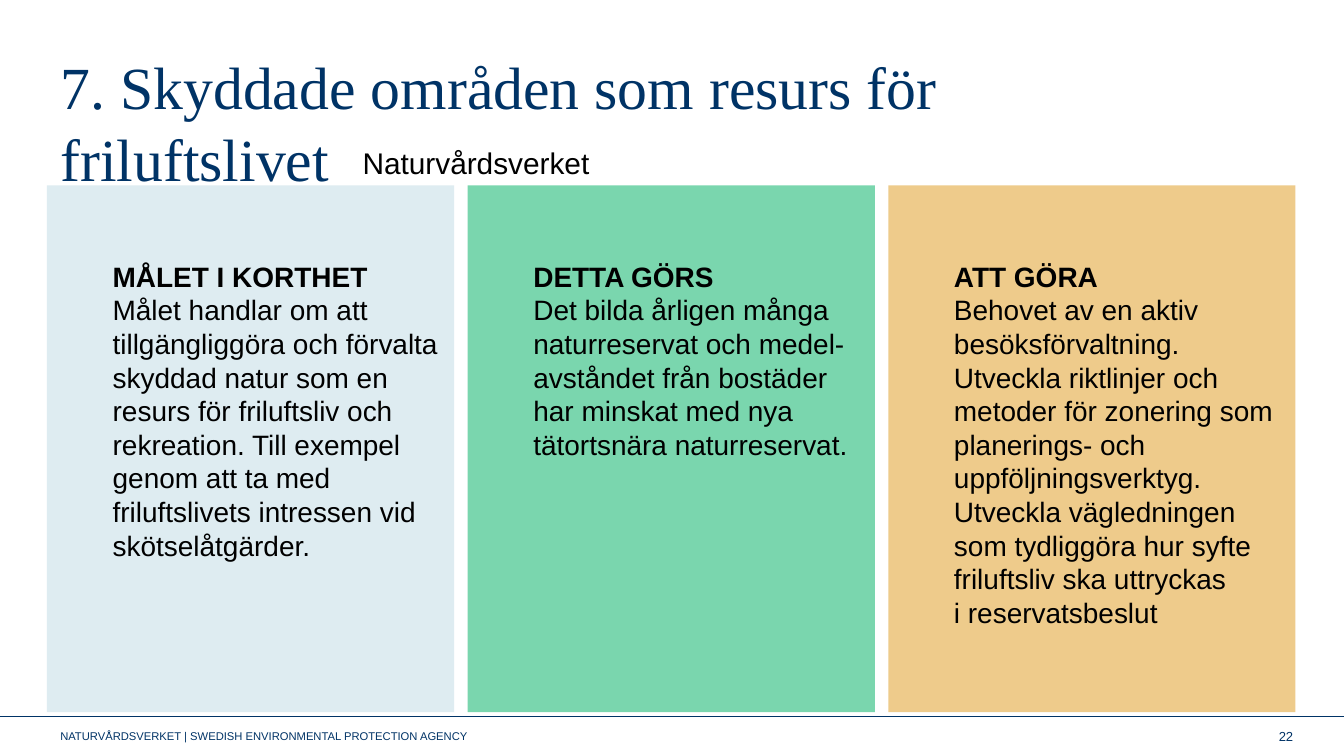
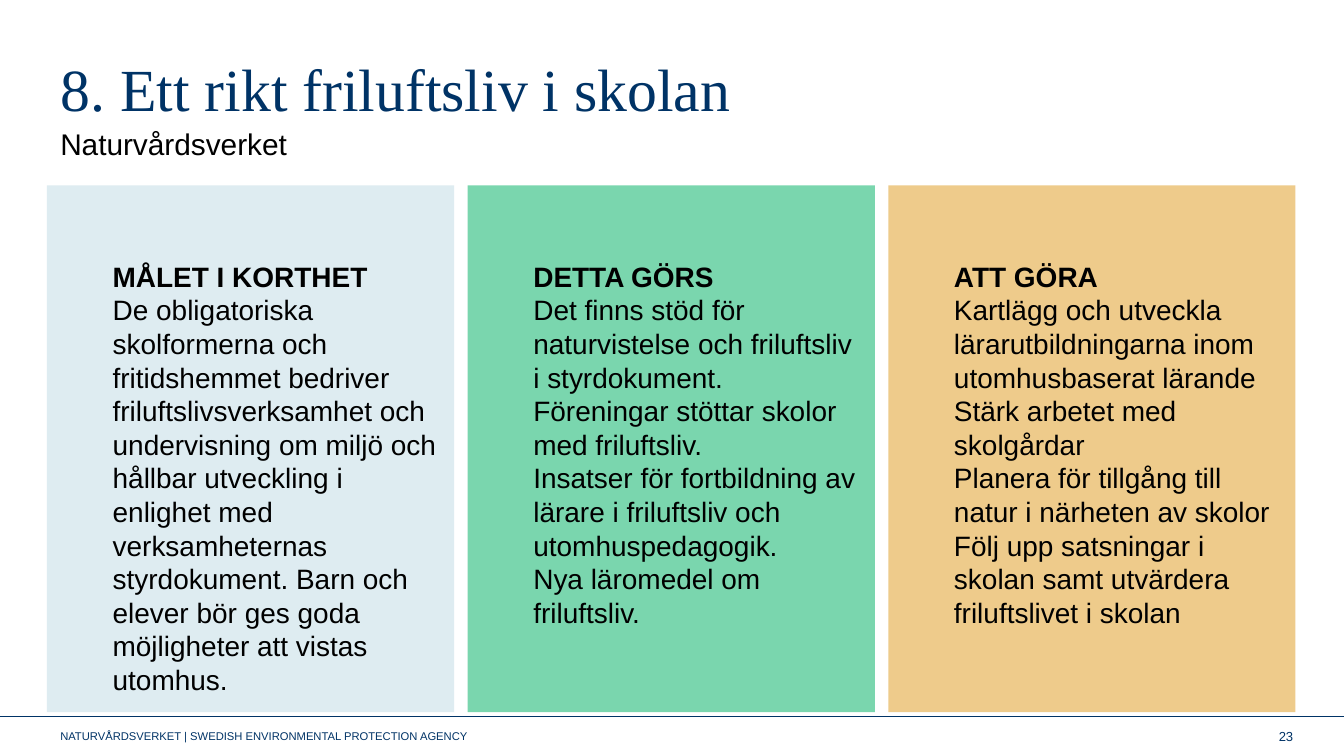
from lxml.etree import SubElement
from pptx import Presentation
from pptx.dml.color import RGBColor as Rgb
from pptx.enum.shapes import MSO_CONNECTOR as Link, MSO_SHAPE as Form
from pptx.enum.text import MSO_ANCHOR as Anchor, MSO_AUTO_SIZE as Fit, PP_ALIGN as Align
from pptx.oxml.ns import qn
from pptx.util import Inches, Pt

HUES = {"navy": "003366", "ink": "000000", "goal": "DEECF1", "done": "7AD6AE", "todo": "EECB8B"}
SANS, SERIF = "Arial", "Times New Roman"
AGENCY = "Naturvårdsverket"
FOOT = "NATURVÅRDSVERKET | SWEDISH ENVIRONMENTAL PROTECTION AGENCY"
HEADS = [("MÅLET I KORTHET", "goal"), ("DETTA GÖRS", "done"), ("ATT GÖRA", "todo")]

SLIDES = [
    {
        "title": "7. Skyddade områden som resurs för friluftslivet",
        "lead": 38.6,
        "owner": (26, 18.31, 22.6, 6.58),
        "number": 22,
        "panels": [
            ["Målet handlar om att tillgängliggöra och förvalta skyddad natur som en resurs för "
             "friluftsliv och rekreation. Till exempel genom att ta med friluftslivets intressen "
             "vid skötselåtgärder."],
            ["Det bilda årligen många naturreservat och medel-avståndet från bostäder har minskat "
             "med nya tätortsnära naturreservat."],
            ["Behovet av en aktiv besöksförvaltning. Utveckla riktlinjer och metoder för zonering som",
             "planerings- och uppföljningsverktyg. Utveckla vägledningen som tydliggöra hur syfte "
             "friluftsliv ska uttryckas",
             "i reservatsbeslut"],
        ],
    },
    {
        "title": "8. Ett rikt friluftsliv i skolan",
        "lead": 39.6,
        "owner": (3.5, 15.82, 40.9, 6.58),
        "number": 23,
        "panels": [
            ["De obligatoriska skolformerna och fritidshemmet bedriver friluftslivsverksamhet och "
             "undervisning om miljö och hållbar utveckling i enlighet med verksamheternas "
             "styrdokument. Barn och elever bör ges goda möjligheter att vistas utomhus."],
            ["Det finns stöd för naturvistelse och friluftsliv i styrdokument.",
             "Föreningar stöttar skolor med friluftsliv.",
             "Insatser för fortbildning av lärare i friluftsliv och utomhuspedagogik.",
             "Nya läromedel om friluftsliv."],
            ["Kartlägg och utveckla lärarutbildningarna inom utomhusbaserat lärande",
             "Stärk arbetet med skolgårdar",
             "Planera för tillgång till natur i närheten av skolor",
             "Följ upp satsningar i skolan samt utvärdera friluftslivet i skolan"],
        ],
    },
]


def write(para, text, size=15, font=SANS, hue="ink", bold=False, align=Align.LEFT, lead=None, indent=0):
    if indent:
        para._p.get_or_add_pPr().set("marL", str(Inches(indent)))
    para.alignment = align
    if lead:
        para.line_spacing = Pt(lead)
    run = para.add_run()
    run.text = text
    run.font.size, run.font.name, run.font.bold = Pt(size), font, bold
    run.font.color.rgb = Rgb.from_string(HUES[hue])


class Deck:
    def __init__(self):
        self.show = Presentation()
        self.show.slide_width = Inches(10)
        self.show.slide_height = Inches(10) * 9 // 16
        self.slide = None

    def area(self, x, y, w, h):
        wide, high = self.show.slide_width, self.show.slide_height
        return [int(share * side / 100) for share, side in zip((x, y, w, h), (wide, high, wide, high))]

    def open(self):
        self.slide = self.show.slides.add_slide(self.show.slide_layouts[5])

    def title(self, text, lead):
        box = self.slide.shapes.title
        box.left, box.top, box.width, box.height = self.area(3.5, 5.16, 78.7, 12.62)
        frame = box.text_frame
        frame.auto_size, frame.vertical_anchor = Fit.NONE, Anchor.TOP
        frame.margin_top = Inches(0.08)
        write(frame.paragraphs[0], text, size=32, font=SERIF, hue="navy", lead=lead)

    def label(self, text, area, anchor=Anchor.TOP, **style):
        frame = self.slide.shapes.add_textbox(*self.area(*area)).text_frame
        frame.word_wrap, frame.vertical_anchor = True, anchor
        write(frame.paragraphs[0], text, **style)

    def panel(self, col, head, hue, lines):
        box = self.slide.shapes.add_shape(Form.RECTANGLE, *self.area(3.5 + 31.3 * col, 24.53, 30.3, 69.69))
        box.shadow.inherit = False
        box.fill.solid()
        box.fill.fore_color.rgb = Rgb.from_string(HUES[hue])
        box.line.fill.background()
        frame = box.text_frame
        frame.word_wrap, frame.vertical_anchor = True, Anchor.TOP
        frame.margin_top = Inches(0.55)
        write(frame.paragraphs[0], head, bold=True, lead=18, indent=0.39)
        for line in lines:
            write(frame.add_paragraph(), line, lead=18, indent=0.39)

    def footer(self, number):
        x, y, w, _ = self.area(0, 94.76, 100, 0)
        rule = self.slide.shapes.add_connector(Link.STRAIGHT, x, y, w, y)
        rule.line.width = Pt(0.4)
        rule.line.color.rgb = Rgb.from_string(HUES["navy"])
        SubElement(rule._element.spPr, qn("a:effectLst"))
        self.label(FOOT, (3.5, 94.76, 33.8, 5.24), Anchor.MIDDLE, size=6, hue="navy")
        self.label(str(number), (74.7, 94.76, 22.5, 5.24), Anchor.MIDDLE, size=7, hue="navy", align=Align.RIGHT)


def main():
    deck = Deck()
    for page in SLIDES:
        deck.open()
        deck.footer(page["number"])
        deck.title(page["title"], page["lead"])
        deck.label(AGENCY, page["owner"], size=16)
        for col, ((head, hue), lines) in enumerate(zip(HEADS, page["panels"])):
            deck.panel(col, head, hue, lines)
    deck.show.save("out.pptx")


if __name__ == "__main__":
    main()
